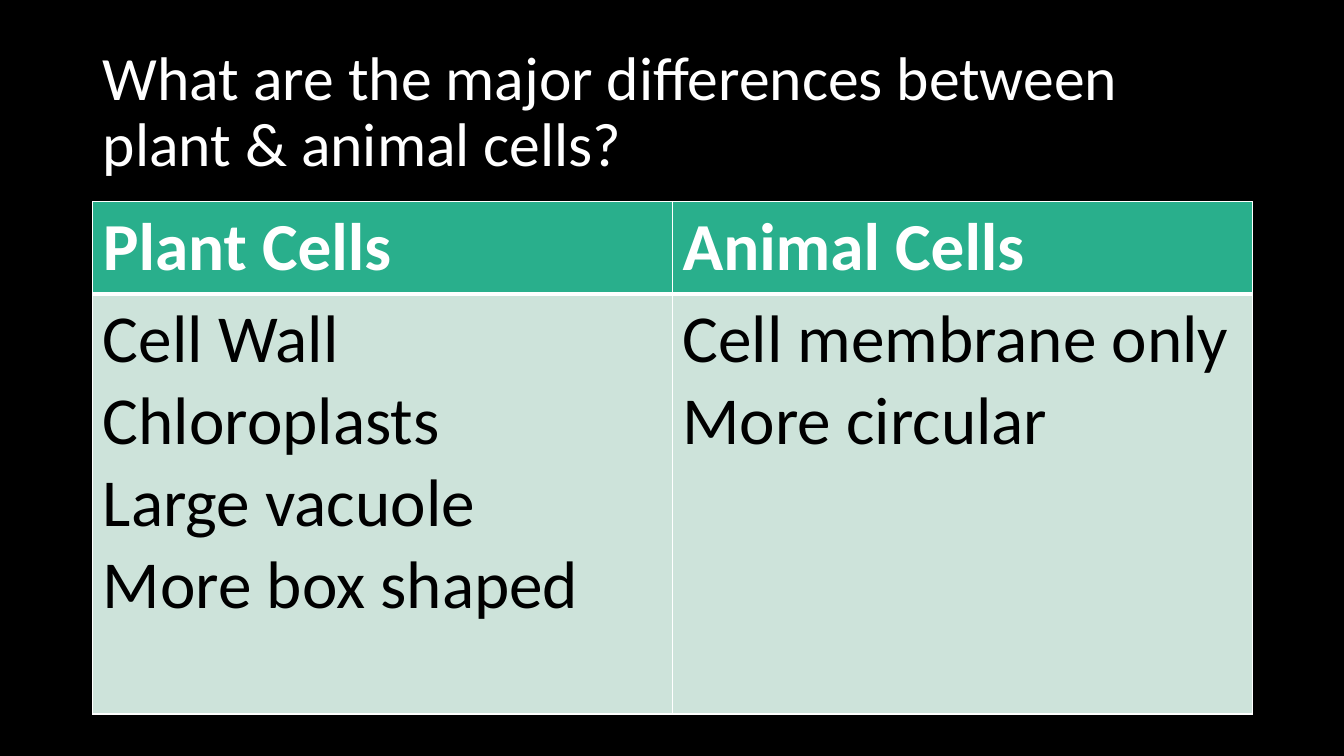
import pptx
import pptx.dml.color
import pptx.enum.text
import pptx.oxml
import pptx.oxml.ns
import pptx.util
from pptx.util import Inches, Pt

QUESTION = "What are the major differences between plant & animal cells?"
TRAITS = {
    "Plant Cells": ["Cell Wall", "Chloroplasts", "Large vacuole", "More box shaped"],
    "Animal Cells": ["Cell membrane only", "More circular"],
}
HEADING = {"size": Pt(48), "name": "Calibri", "bold": True, "color": "FFFFFF"}
TRAIT = {**HEADING, "bold": False, "color": "000000"}
TITLE = {**TRAIT, "size": Pt(44), "color": "FFFFFF"}
LEFT, WIDTH = 0.92, 11.5
ROW_HEIGHTS = [0.91, 4.17]
HEADING_FILL, TRAIT_FILL = "29AF8C", "CDE3DA"
RULE_COLOR = "FFFFFF"


def paint(fill, color):
    fill.solid()
    fill.fore_color.rgb = pptx.dml.color.RGBColor.from_string(color)


def write(frame, lines, style):
    frame.text = "\n".join(lines)
    for paragraph in frame.paragraphs:
        for run in paragraph.runs:
            for key, value in style.items():
                if key == "color":
                    paint(run.font.fill, value)
                else:
                    setattr(run.font, key, value)


def add_borders(cell, widths):
    """Draw cell edges; widths are points in left, right, top, bottom order."""
    properties = cell._tc.get_or_add_tcPr()
    for place, (side, width) in enumerate(zip("LRTB", widths)):
        properties.insert(place, pptx.oxml.parse_xml(
            f'<a:ln{side} {pptx.oxml.ns.nsdecls("a")} w="{Pt(width)}">'
            f'<a:solidFill><a:srgbClr val="{RULE_COLOR}"/></a:solidFill>'
            f'</a:ln{side}>'))


def main():
    deck = pptx.Presentation()
    deck.slide_width, deck.slide_height = Inches(13.33), Inches(7.5)
    slide = deck.slides.add_slide(deck.slide_layouts[5])
    paint(slide.background.fill, "000000")

    title = slide.shapes.title
    title.left, title.top = Inches(LEFT), Inches(0.4)
    title.width, title.height = Inches(WIDTH), Inches(1.45)
    write(title.text_frame, [QUESTION], TITLE)
    title.text_frame.auto_size = pptx.enum.text.MSO_AUTO_SIZE.NONE
    title.text_frame.vertical_anchor = pptx.enum.text.MSO_ANCHOR.MIDDLE
    title.text_frame.paragraphs[0].alignment = pptx.enum.text.PP_ALIGN.LEFT
    title.text_frame.paragraphs[0].line_spacing = 0.9

    comparison = slide.shapes.add_table(
        len(ROW_HEIGHTS), len(TRAITS), Inches(LEFT), Inches(2),
        Inches(WIDTH), Inches(sum(ROW_HEIGHTS))).table
    comparison.horz_banding = False
    for row, height in zip(comparison.rows, ROW_HEIGHTS):
        row.height = Inches(height)
    for column, (heading, traits) in enumerate(TRAITS.items()):
        comparison.columns[column].width = Inches(WIDTH / len(TRAITS))
        parts = [([heading], HEADING, HEADING_FILL, (1, 1, 1, 3)),
                 (traits, TRAIT, TRAIT_FILL, (1, 1, 3, 1))]
        for row, (lines, style, color, widths) in enumerate(parts):
            cell = comparison.cell(row, column)
            write(cell.text_frame, lines, style)
            paint(cell.fill, color)
            add_borders(cell, widths)

    deck.save("out.pptx")


if __name__ == "__main__":
    main()
